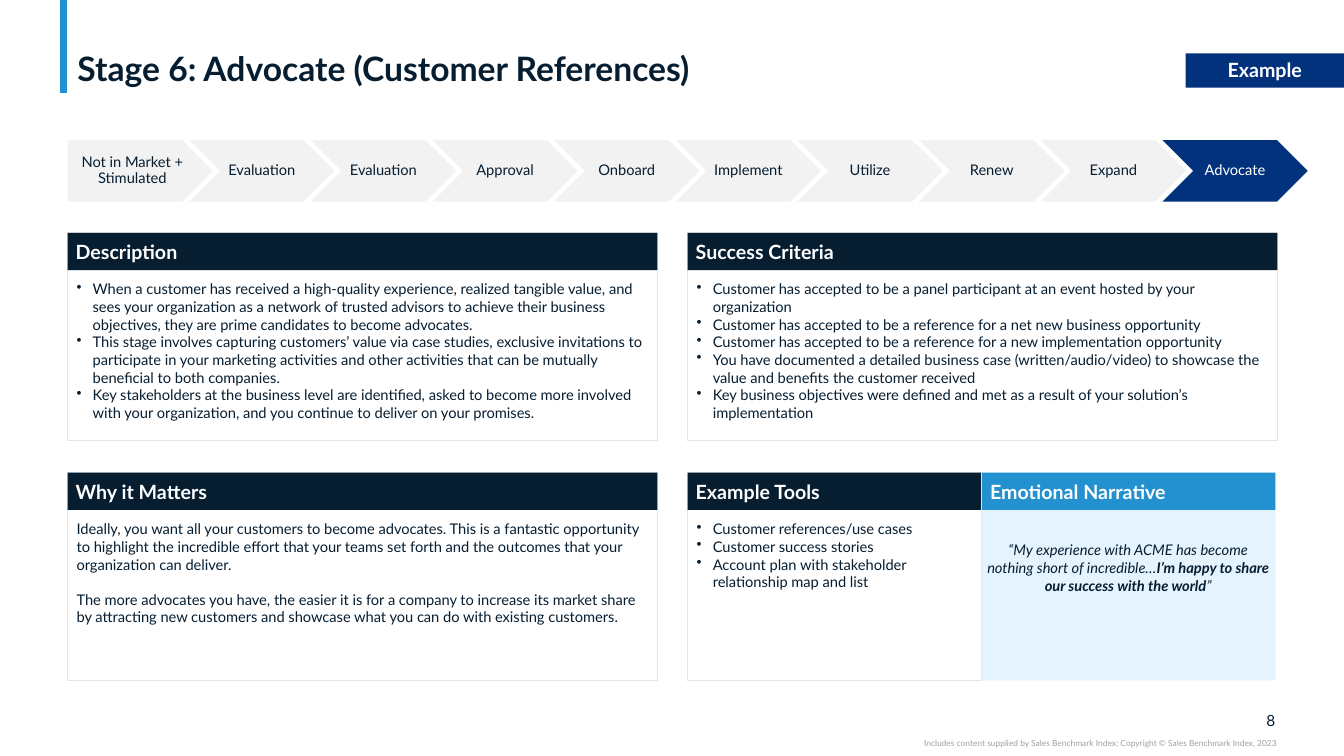
from lxml import etree
from pptx import Presentation
from pptx.dml.color import RGBColor
from pptx.enum import shapes, text
from pptx.oxml import ns
from pptx.util import Inches, Pt

INK = RGBColor(0x07, 0x1E, 0x31)
NAVY = RGBColor(0x03, 0x32, 0x7C)
BLUE = RGBColor(0x23, 0x91, 0xCF)
PALE = RGBColor(0xE4, 0xF3, 0xFE)
GREY = RGBColor(0xF2, 0xF2, 0xF2)
EDGE = RGBColor(0xE7, 0xE6, 0xE6)
DIM = RGBColor(0xA0, 0xA0, 0xA0)
WHITE = RGBColor(0xFF, 0xFF, 0xFF)
KIND = shapes.MSO_SHAPE
LEFT, MID, RIGHT = text.PP_ALIGN.LEFT, text.PP_ALIGN.CENTER, text.PP_ALIGN.RIGHT
TOP, CENTER, BASE = text.MSO_ANCHOR.TOP, text.MSO_ANCHOR.MIDDLE, text.MSO_ANCHOR.BOTTOM


class Page:
    font = "Lato"
    small = 10.5
    large = 14

    def __init__(self, deck):
        self.slide = deck.slides.add_slide(deck.slide_layouts[6])

    def put(self, shape, words, size, color=INK, bold=False, align=LEFT,
            anchor=TOP, pad=(0, 0, 0, 0), lead=None, gap=0, bullet=False):
        frame = shape.text_frame
        frame.text = words
        frame.word_wrap = True
        frame.vertical_anchor = anchor
        frame.margin_left, frame.margin_top, frame.margin_right, frame.margin_bottom = map(Inches, pad)
        for rank, para in enumerate(frame.paragraphs):
            para.alignment = align
            if lead:
                para.line_spacing = lead
            if rank and gap:
                para.space_before = Pt(gap)
            if bullet:
                self.bullet(para)
            for run in para.runs:
                self.style(run, size, color, bold)
        return frame

    def style(self, run, size, color, bold=False, italic=False):
        font = run.font
        font.name, font.size, font.bold, font.italic = self.font, Pt(size), bold, italic
        font.color.rgb = color

    def bullet(self, para):
        props = para._p.get_or_add_pPr()
        props.set("marL", str(Inches(0.16)))
        props.set("indent", str(-Inches(0.16)))
        tint = etree.SubElement(props, ns.qn("a:buClr"))
        etree.SubElement(tint, ns.qn("a:srgbClr")).set("val", str(INK))
        etree.SubElement(props, ns.qn("a:buChar")).set("char", "•")

    def label(self, box, words, size, **look):
        shape = self.slide.shapes.add_textbox(*map(Inches, box))
        return self.put(shape, words, size, **look)

    def shape(self, kind, box, fill, edge=None):
        shape = self.slide.shapes.add_shape(kind, *map(Inches, box))
        shape.shadow.inherit = False
        shape.fill.solid()
        shape.fill.fore_color.rgb = fill
        if edge:
            shape.line.color.rgb = edge
            shape.line.width = Pt(0.5)
        else:
            shape.line.fill.background()
        return shape

    def line(self, x, top, end, color, width):
        line = self.slide.shapes.add_connector(
            shapes.MSO_CONNECTOR.STRAIGHT, *map(Inches, (x, top, x, end)))
        line.line.color.rgb = color
        line.line.width = Pt(width)
        etree.SubElement(line._element.spPr, ns.qn("a:effectLst"))

    def panel(self, x, y, width, head, fill=WHITE, edge=EDGE, bar=INK):
        self.shape(KIND.RECTANGLE, (x, y, width, 2.06), fill, edge)
        strip = self.shape(KIND.RECTANGLE, (x, y, width, 0.37), bar)
        self.put(strip, head, self.large, WHITE, True, anchor=CENTER, pad=(0.08, 0, 0, 0))

    def body(self, x, y, width, lines, **look):
        self.label((x + 0.09, y + 0.47, width, 1.41), "\n".join(lines), self.small, **look)

    def step(self, kind, x, words, fill, color):
        arrow = self.shape(kind, (x, 1.39, 1.44, 0.61), fill)
        self.put(arrow, words, self.small, color, align=MID, anchor=CENTER, lead=0.9)

    def quote(self, box, parts):
        frame = self.label(box, "", self.small)
        para = frame.paragraphs[0]
        para.alignment = MID
        for words, bold in parts:
            run = para.add_run()
            run.text = words
            self.style(run, self.small, INK, bold, True)


STEPS = ["Not in Market + Stimulated", "Evaluation", "Evaluation", "Approval", "Onboard",
         "Implement", "Utilize", "Renew", "Expand", "Advocate"]
ABOUT = [
    "When a customer has received a high-quality experience, realized tangible value, and sees your organization as a network of trusted advisors to achieve their business objectives, they are prime candidates to become advocates.",
    "This stage involves capturing customers’ value via case studies, exclusive invitations to participate in your marketing activities and other activities that can be mutually beneficial to both companies.",
    "Key stakeholders at the business level are identified, asked to become more involved with your organization, and you continue to deliver on your promises.",
]
GOALS = [
    "Customer has accepted to be a panel participant at an event hosted by your organization",
    "Customer has accepted to be a reference for a net new business opportunity",
    "Customer has accepted to be a reference for a new implementation opportunity",
    "You have documented a detailed business case (written/audio/video) to showcase the value and benefits the customer received",
    "Key business objectives were defined and met as a result of your solution’s implementation",
]
WHY = [
    "Ideally, you want all your customers to become advocates. This is a fantastic opportunity to highlight the incredible effort that your teams set forth and the outcomes that your organization can deliver.",
    "The more advocates you have, the easier it is for a company to increase its market share by attracting new customers and showcase what you can do with existing customers.",
]
TOOLS = [
    "Customer references/use cases",
    "Customer success stories",
    "Account plan with stakeholder relationship map and list",
]
QUOTE = [
    ("“My experience with ACME has become nothing short of incredible…", False),
    ("I’m happy to share our success with the world", True),
    ("”", False),
]


def main():
    deck = Presentation()
    deck.slide_width, deck.slide_height = Inches(13.33), Inches(7.5)
    page = Page(deck)
    west, east, high, low = 0.67, 6.82, 2.31, 4.69
    wide, half = 5.85, 2.91

    page.line(0.63, 0, 0.92, BLUE, 5)
    page.label((west, 0.04, 11.99, 0.84), "Stage 6: Advocate (Customer References)", 24,
               bold=True, anchor=BASE, pad=(0.1, 0, 0.1, 0), lead=0.9)
    tag = page.shape(KIND.RECTANGLE, (11.76, 0.53, 1.57, 0.34), NAVY)
    page.put(tag, "Example", page.large, WHITE, True, MID, pad=(0.1, 0.05, 0.1, 0.05))

    pitch = (11.53 - west) / (len(STEPS) - 1)
    for rank, words in enumerate(STEPS):
        kind = KIND.CHEVRON if rank else KIND.PENTAGON
        now = rank == len(STEPS) - 1
        page.step(kind, west + rank * pitch, words, NAVY if now else GREY, WHITE if now else INK)

    for x, y, width, room, head, lines, look in [
        (west, high, wide, 5.66, "Description", ABOUT, {"bullet": True}),
        (east, high, wide, 5.66, "Success Criteria", GOALS, {"bullet": True}),
        (west, low, wide, 5.66, "Why it Matters", WHY, {"gap": 12.6}),
        (east, low, half, 2.82, "Example Tools", TOOLS, {"bullet": True}),
    ]:
        page.panel(x, y, width, head)
        page.body(x, y, room, lines, **look)
    page.panel(9.74, low, half, "Emotional Narrative", PALE, None, BLUE)
    page.quote((9.78, 5.37, 2.82, 0.53), QUOTE)

    page.label((12.32, 7.05, 0.33, 0.19), "8", 11, align=RIGHT, anchor=CENTER)
    page.label((7.5, 7.32, 5.16, 0.1),
               "Includes content supplied by Sales Benchmark Index; Copyright © Sales Benchmark Index, 2023",
               6, color=DIM, align=RIGHT)
    deck.save("out.pptx")


if __name__ == "__main__":
    main()
